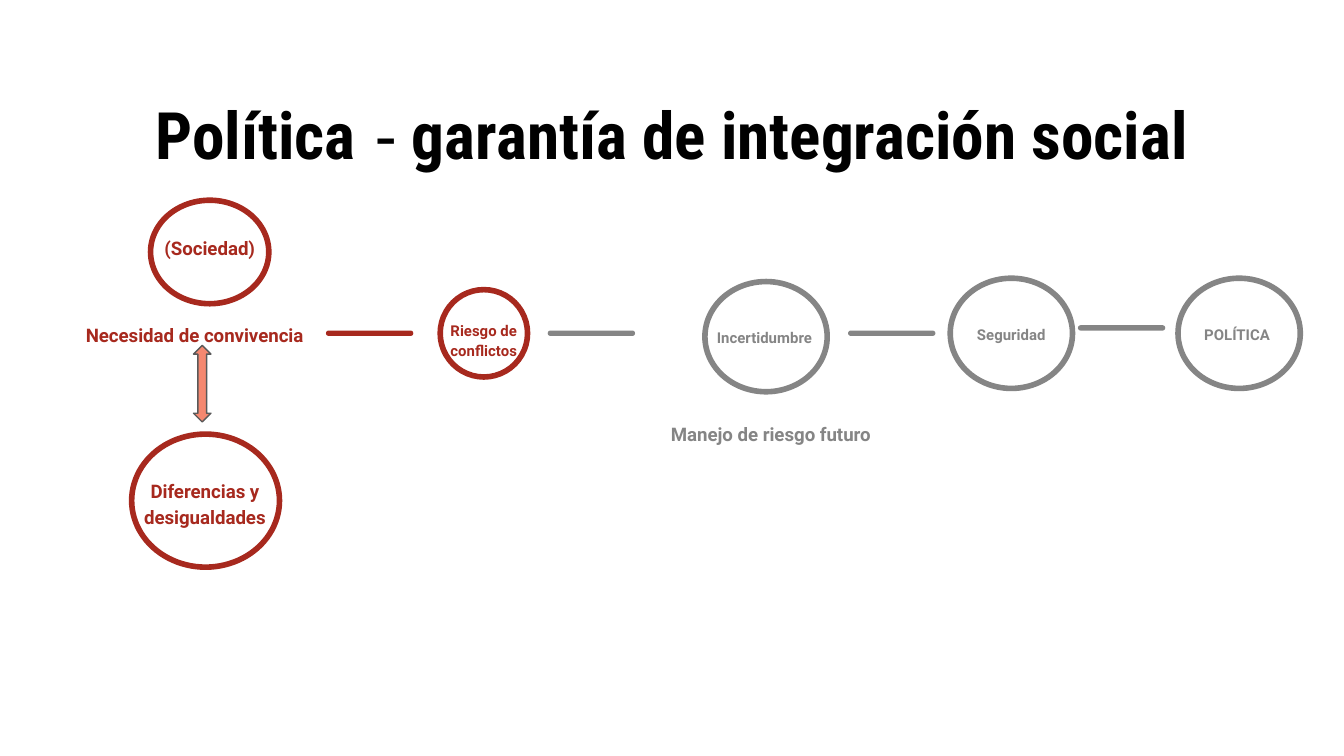
"""Build the slide on politics as a guarantee of social integration."""
import dataclasses

import pptx
import pptx.dml.color
import pptx.enum.shapes
import pptx.enum.text
import pptx.util

CELL = 0.1
COLS, ROWS = 100, 56.25
COLORS = {"red": "A7291E", "gray": "858585", "salmon": "F58870", "dark": "595959", "black": "000000"}
SHAPE = pptx.enum.shapes.MSO_SHAPE
ALIGN = pptx.enum.text.PP_ALIGN
ANCHOR = pptx.enum.text.MSO_ANCHOR


@dataclasses.dataclass(frozen=True)
class Box:
    col: float
    row: float
    cols: float
    rows: float

    def emu(self) -> list[int]:
        return [pptx.util.Inches(v * CELL) for v in (self.col, self.row, self.cols, self.rows)]


@dataclasses.dataclass(frozen=True)
class Run:
    text: str
    size: float
    font: str = "Roboto"
    bold: bool = True


@dataclasses.dataclass(frozen=True)
class Node:
    ring: Box
    label: Box
    text: str
    color: str
    size: float = 8
    after: float = 16
    align: ALIGN = ALIGN.CENTER


@dataclasses.dataclass(frozen=True)
class Caption:
    box: Box
    text: str
    color: str


@dataclasses.dataclass(frozen=True)
class Dash:
    col: float
    row: float
    color: str


def gray_node(col: float, row: float, text: str, label_col: float = -0.4, align: ALIGN = ALIGN.CENTER) -> Node:
    return Node(Box(col, row, 9.1, 8.2), Box(col + label_col, row + 2.55, 9.9, 3.5), text, "gray", align=align)


NODES = [
    Node(Box(9.8, 32.3, 11, 9.9), Box(9.1, 34.45, 12.3, 4), "Diferencias y desigualdades", "red", 10, 0),
    Node(Box(32.75, 21.55, 6.5, 6.5), Box(32.3, 22.7, 7.4, 3.5), "Riesgo de conflictos", "red"),
    Node(Box(11.2, 14.9, 8.8, 7.7), Box(11.2, 16.4, 8.8, 3.5), "(Sociedad)", "red", 10, 0),
    gray_node(52.45, 20.95, "Incertidumbre", -0.1, ALIGN.LEFT),
    gray_node(70.7, 20.7, "Seguridad"),
    gray_node(87.65, 20.7, "POLÍTICA", -0.55),
]
CAPTIONS = [
    Caption(Box(48, 29.2, 18.7, 4.9), "Manejo de riesgo futuro", "gray"),
    Caption(Box(5.3, 21.8, 18.7, 4.9), "Necesidad de convivencia ", "red"),
]
DASHES = [Dash(24.25, 24.6, "red"), Dash(40.75, 24.6, "gray"), Dash(63.1, 24.6, "gray"), Dash(80.2, 24.2, "gray")]
TITLE = [
    Run("Política", 35, "Roboto Condensed"),
    Run(" -", 36, "Arial", False),
    Run(" garantía de integración social", 35, "Roboto Condensed"),
]


def rgb(color: str) -> pptx.dml.color.RGBColor:
    return pptx.dml.color.RGBColor.from_string(COLORS[color])


def add_text(s, box: Box, runs: list[Run], *, color: str, align: ALIGN = ALIGN.CENTER,
             anchor: ANCHOR = ANCHOR.TOP, spacing: float = 1.15, after: float = 0) -> None:
    tf = s.shapes.add_textbox(*box.emu()).text_frame
    tf.word_wrap = True
    tf.vertical_anchor = anchor
    tf.margin_left = tf.margin_right = tf.margin_top = tf.margin_bottom = pptx.util.Inches(0.1)
    p = tf.paragraphs[0]
    p.alignment, p.line_spacing = align, spacing
    p.space_after = pptx.util.Pt(after)
    for run in runs:
        r = p.add_run()
        r.text = run.text
        r.font.name, r.font.bold = run.font, run.bold
        r.font.size = pptx.util.Pt(run.size)
        r.font.color.rgb = rgb(color)


def add_figure(s, kind: SHAPE, box: Box, *, fill: str | None = None, line: str | None = None,
               width: float = 3, adjust: float | None = None) -> None:
    sp = s.shapes.add_shape(kind, *box.emu())
    sp.shadow.inherit = False
    if fill:
        sp.fill.solid()
        sp.fill.fore_color.rgb = rgb(fill)
    else:
        sp.fill.background()
    if line:
        sp.line.color.rgb = rgb(line)
        sp.line.width = pptx.util.Pt(width)
    else:
        sp.line.fill.background()
    if adjust is not None:
        for i in range(len(sp.adjustments)):
            sp.adjustments[i] = adjust


def add_node(s, node: Node) -> None:
    add_figure(s, SHAPE.OVAL, node.ring, line=node.color)
    add_text(s, node.label, [Run(node.text, node.size)], color=node.color, align=node.align, after=node.after)


def main() -> None:
    prs = pptx.Presentation()
    prs.slide_width = pptx.util.Inches(COLS * CELL)
    prs.slide_height = pptx.util.Inches(ROWS * CELL)
    s = prs.slides.add_slide(prs.slide_layouts[6])
    add_text(s, Box(3.4, 5.3, 93.2, 9.2), TITLE, color="black", anchor=ANCHOR.MIDDLE, spacing=1.0)
    for node in NODES:
        add_node(s, node)
    for caption in CAPTIONS:
        add_text(s, caption.box, [Run(caption.text, 10)], color=caption.color, anchor=ANCHOR.BOTTOM)
    for dash in DASHES:
        add_figure(s, SHAPE.ROUNDED_RECTANGLE, Box(dash.col, dash.row, 6.5, 0.4), fill=dash.color, adjust=0.5)
    add_figure(s, SHAPE.UP_DOWN_ARROW, Box(14.4, 25.7, 1.3, 5.7), fill="salmon", line="dark", width=0.75, adjust=0.5)
    prs.save("out.pptx")


if __name__ == "__main__":
    main()
